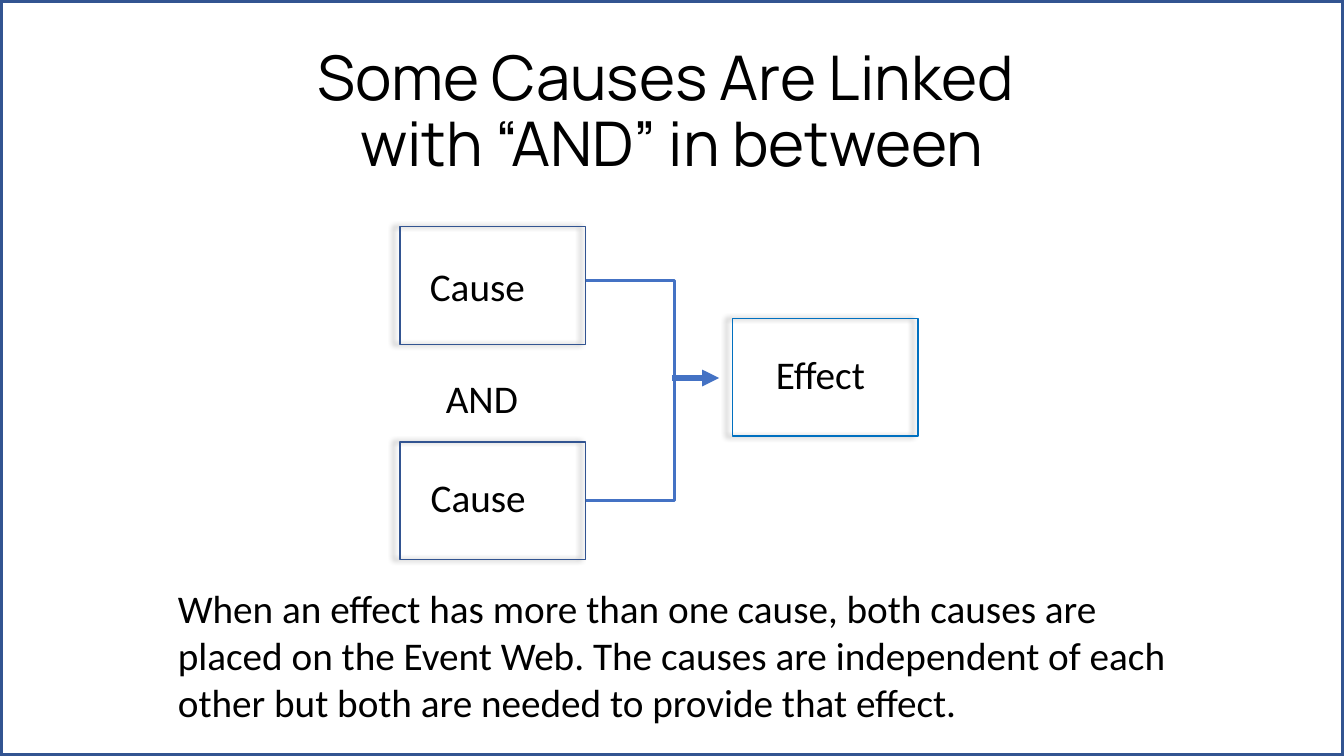
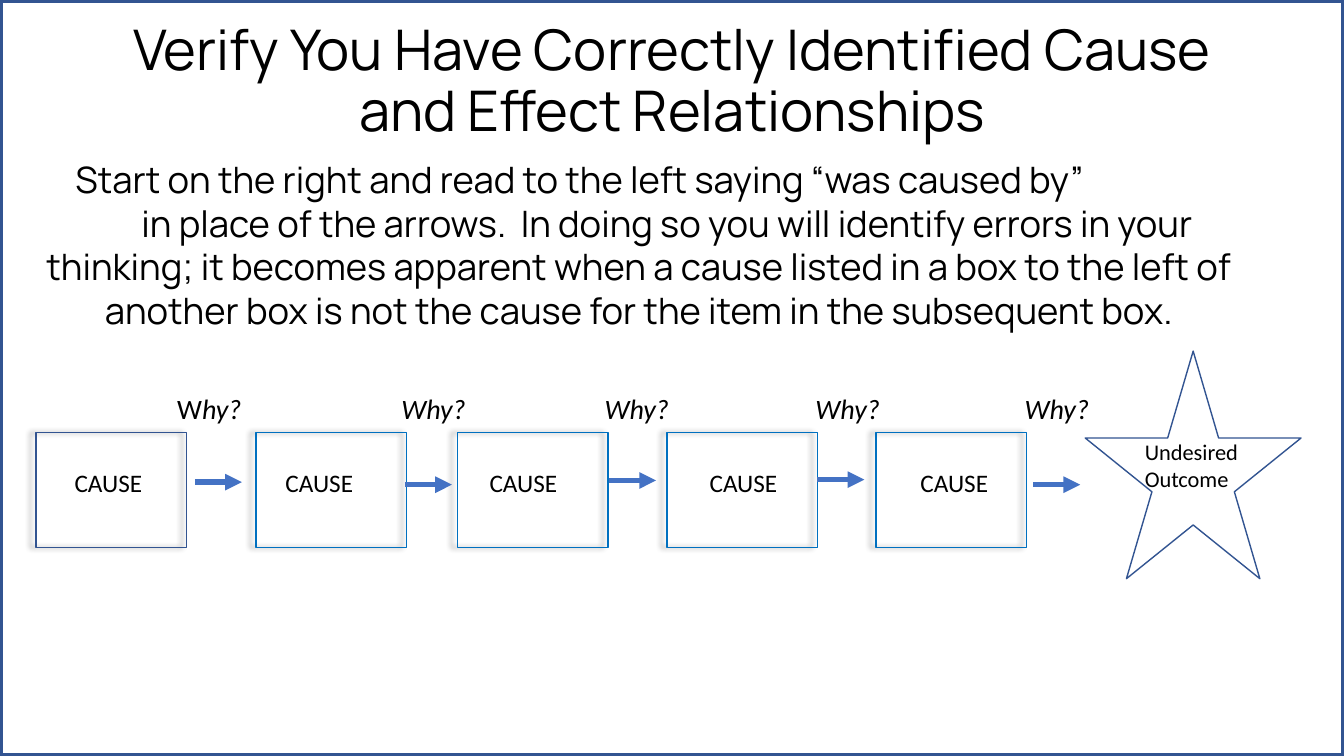
from dataclasses import dataclass

from lxml.etree import SubElement
from pptx import Presentation
from pptx.dml.color import RGBColor
from pptx.enum.shapes import MSO_CONNECTOR, MSO_SHAPE
from pptx.enum.text import MSO_ANCHOR, PP_ALIGN
from pptx.oxml import parse_xml
from pptx.oxml.ns import nsdecls, qn
from pptx.util import Inches, Pt


@dataclass(frozen=True)
class Theme:
    ink: RGBColor = RGBColor(0, 0, 0)
    navy: RGBColor = RGBColor(0x32, 0x54, 0x91)
    sky: RGBColor = RGBColor(0x00, 0x70, 0xC0)
    blue: RGBColor = RGBColor(0x44, 0x72, 0xC4)
    head: str = "Manrope"
    body: str = "Calibri"
    title: int = 44
    tight: int = 40
    large: int = 28
    lead: int = 26
    ask: int = 20
    label: int = 18
    small: int = 16
    thin: float = 1
    elbow: float = 2.25
    arrow: float = 4
    frame: float = 4.5


T = Theme()
TITLE = {"alignment": PP_ALIGN.CENTER, "line_spacing": 0.9}
SHADOW = (
    f'<a:effectLst {nsdecls("a")}><a:outerShdw blurRad="50800" dist="50800" '
    'dir="10800000"><a:srgbClr val="000000"><a:alpha val="43000"/></a:srgbClr>'
    "</a:outerShdw></a:effectLst>"
)

deck = Presentation()
deck.slide_width, deck.slide_height = Inches(13.33), Inches(7.5)
COL, ROW = deck.slide_width / 160, deck.slide_height / 90


def grid(*spans):
    """Turn alternating columns and rows into slide lengths."""
    return [round(n * (ROW if i % 2 else COL)) for i, n in enumerate(spans)]


def write(slide, spot, runs, size, face=T.body, form=None, anchor=MSO_ANCHOR.TOP):
    """Add a one-paragraph text box; runs are (text, italic) pairs or a string."""
    frame = slide.shapes.add_textbox(*grid(*spot)).text_frame
    frame.word_wrap, frame.vertical_anchor = True, anchor
    para = frame.paragraphs[0]
    for name, value in (form or {}).items():
        setattr(para, name, value)
    for words, slant in [(runs, False)] if isinstance(runs, str) else runs:
        for i, line in enumerate(words.split("\n")):
            if i:
                para.add_line_break()
            run = para.add_run()
            run.text = line
            looks = {"name": face, "size": Pt(size), "italic": slant}
            for name, value in looks.items():
                setattr(run.font, name, value)
            run.font.color.rgb = T.ink
    return para


link, check = [deck.slides.add_slide(deck.slide_layouts[6]) for _ in range(2)]

# Outlines: slide, preset, place, colour, line width, shadow
RECT, STAR = MSO_SHAPE.RECTANGLE, MSO_SHAPE.STAR_5_POINT
BIG, BOX = (22.1, 14), (17.9, 13.7)
STEPS = (4.3, 30.5, 54.5, 79.4, 104.3)
shapes = [(s, RECT, (0, 0, 160, 90), T.navy, T.frame, False) for s in (link, check)]
shapes += [(link, RECT, (47.6, y, *BIG), T.navy, T.thin, True) for y in (27, 52.6)]
shapes += [(link, RECT, (87.2, 37.9, *BIG), T.sky, T.thin, True)]
shapes += [
    (check, RECT, (x, 51.5, *BOX), T.sky if i else T.navy, T.thin, True)
    for i, x in enumerate(STEPS)
]
shapes += [(check, STAR, (129.2, 41.8, 25.7, 27.1), T.navy, T.thin, False)]
for slide, kind, spot, tint, width, shade in shapes:
    shape = slide.shapes.add_shape(kind, *grid(*spot))
    shape.fill.background()
    shape.line.color.rgb, shape.line.width = tint, Pt(width)
    shape.shadow.inherit = False
    if shade:
        props = shape._element.spPr
        props.replace(props.find(qn("a:effectLst")), parse_xml(SHADOW))

# Connectors: slide, ends, whether bent
GAPS = ((23.2, 57.4), (48.2, 57.7), (72.5, 57.2), (97.3, 57.1), (123, 57.7))
lines = [(link, (69.8, y, 80.3, 45), True) for y in (33.4, 59.6)]
lines += [(link, (80, 45, 85.6, 45), False)]
lines += [(check, (x, y, x + 5.6, y), False) for x, y in GAPS]
for slide, ends, bent in lines:
    kind = MSO_CONNECTOR.ELBOW if bent else MSO_CONNECTOR.STRAIGHT
    wire = slide.shapes.add_connector(kind, *grid(*ends))
    wire.line.color.rgb = T.blue
    wire.line.width = Pt(T.elbow if bent else T.arrow)
    props = wire._element.spPr
    if bent:
        props.find(qn("a:prstGeom")).set("prst", "bentConnector2")
    else:
        SubElement(props.find(qn("a:ln")), qn("a:tailEnd")).set("type", "triangle")
    SubElement(props, qn("a:effectLst"))

# Titles
titles = [
    (link, (11, 4.8, 138, 17.4),
     "Some Causes Are Linked \nwith “AND” in between", T.title),
    (check, (11, 0, 138, 19.7),
     "Verify You Have Correctly Identified Cause and Effect Relationships", T.tight),
]
for slide, spot, words, size in titles:
    write(slide, spot, words, size, T.head, TITLE, MSO_ANCHOR.MIDDLE)

# Linked causes
names = [("Cause", 50, 30.6), ("AND", 51.9, 44), ("Cause", 50.1, 55.8), ("Effect", 91.2, 41.1)]
for words, x, y in names:
    write(link, (x, y, 16, 6.8), words, T.large)
write(
    link, (20, 69, 121.6, 18.1),
    "When an effect has more than one cause, both causes are placed on the Event Web. "
    "The causes are independent of each other but both are needed to provide that effect.",
    T.large,
)

# Chain of causes
guide = [
    (18.1, 7.8, PP_ALIGN.LEFT,
     "Start on the right and read to the left saying “was caused by”"),
    (23.3, 6.7, PP_ALIGN.CENTER,
     "in place of the arrows.  In doing so you will identify errors in your thinking; "
     "it becomes apparent when a cause listed in a box to the left of another box "
     "is not the cause for the item in the subsequent box."),
]
for y, indent, align, words in guide:
    para = write(check, (0, y, 152.3, 6), words, T.lead, T.head, {"alignment": align})
    para._p.get_or_add_pPr().set("indent", str(grid(indent)[0]))
for x in (7.7, 32.8, 57.1, 83.3, 108.4):
    write(check, (x, 55, 11.2, 4.8), "CAUSE", T.label)
for i, x in enumerate((19.9, 46.6, 70.8, 95.9, 120.8)):
    write(check, (x, 46, 11.2, 5.2), [("W", i > 0), ("hy?", True)], T.ask)
write(check, (135.1, 51.6, 16.6, 7.7), "Undesired Outcome", T.small)

deck.save("out.pptx")
